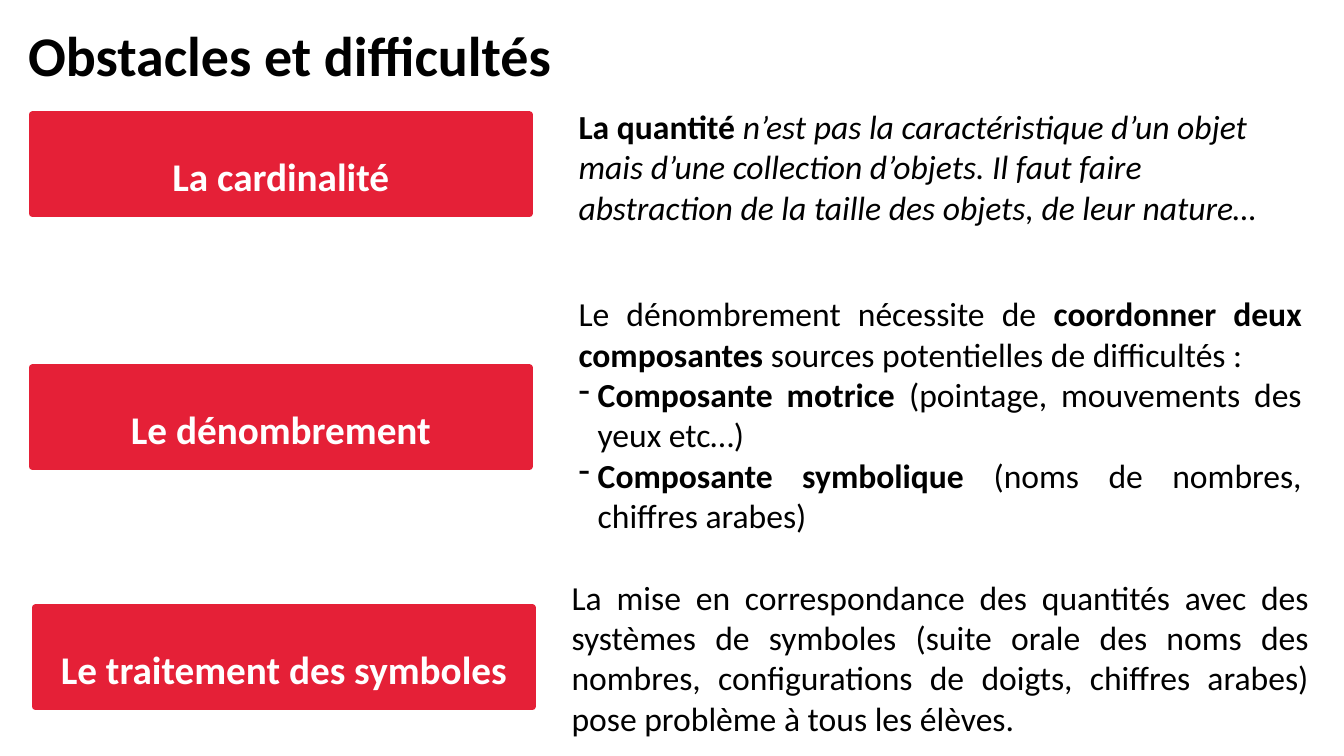
from typing import NamedTuple

from lxml.etree import SubElement
from pptx import Presentation
from pptx.dml.color import RGBColor
from pptx.enum.shapes import MSO_SHAPE as Shape
from pptx.enum.text import MSO_ANCHOR as Anchor, PP_ALIGN as Align
from pptx.oxml.ns import qn
from pptx.util import Inches, Pt

RED, BLACK, WHITE = "E52037", "000000", "FFFFFF"
LABEL_SIZE = (4.93, 0.98)
DASH_INDENT = 0.19


class Run(NamedTuple):
    text: str
    bold: bool = False
    italic: bool = False


class Paragraph(NamedTuple):
    runs: list[Run]
    dash: bool = False


class Obstacle(NamedTuple):
    label: str
    label_at: tuple[float, float]
    explanation_box: tuple[float, float, float, float]
    explanation: list[Paragraph]
    align: Align = Align.JUSTIFY


OBSTACLES = [
    Obstacle("La cardinalité", (0.32, 1.14), (5.64, 1, 7.37, 1.31), [
        Paragraph([
            Run("La quantité ", bold=True),
            Run("n’est pas la caractéristique d’un objet mais d’une collection "
                "d’objets. Il faut faire abstraction de la taille des objets, "
                "de leur nature…", italic=True),
        ]),
    ], Align.LEFT),
    Obstacle("Le dénombrement", (0.32, 3.65), (5.64, 2.86, 7.37, 2.52), [
        Paragraph([
            Run("Le dénombrement nécessite de "),
            Run("coordonner deux composantes", bold=True),
            Run(" sources potentielles de difficultés :"),
        ]),
        Paragraph([
            Run("Composante motrice ", bold=True),
            Run("(pointage, mouvements des yeux etc…)"),
        ], dash=True),
        Paragraph([
            Run("Composante symbolique ", bold=True),
            Run("(noms de nombres, chiffres arabes)"),
        ], dash=True),
    ]),
    Obstacle("Le traitement des symboles", (0.35, 6.03), (5.57, 5.67, 7.51, 1.72), [
        Paragraph([
            Run("La mise en correspondance des quantités avec des systèmes de "
                "symboles (suite orale des noms des nombres, configurations de "
                "doigts, chiffres arabes) pose problème à tous les élèves."),
        ]),
    ]),
]


def rgb(value: str) -> RGBColor:
    return RGBColor.from_string(value)


def add_dash(paragraph) -> None:
    """Give the paragraph a hanging dash bullet."""
    properties = paragraph._p.get_or_add_pPr()
    properties.set("marL", str(Inches(DASH_INDENT)))
    properties.set("indent", str(-Inches(DASH_INDENT)))
    SubElement(properties, qn("a:buChar")).set("char", "-")


def write(frame, paragraphs: list[Paragraph], *, size: float,
          color: str = BLACK, align: Align = Align.LEFT,
          anchor: Anchor = Anchor.TOP, line_spacing: float | None = None) -> None:
    frame.word_wrap = True
    frame.vertical_anchor = anchor
    for index, content in enumerate(paragraphs):
        paragraph = frame.add_paragraph() if index else frame.paragraphs[0]
        paragraph.alignment = align
        if line_spacing:
            paragraph.line_spacing = line_spacing
        if content.dash:
            add_dash(paragraph)
        for part in content.runs:
            run = paragraph.add_run()
            run.text = part.text
            run.font.name = "Calibri"
            run.font.size = Pt(size)
            run.font.bold = part.bold
            run.font.italic = part.italic
            run.font.color.rgb = rgb(color)


def add_text(slide, box: tuple[float, float, float, float],
             paragraphs: list[Paragraph], **text_format) -> None:
    textbox = slide.shapes.add_textbox(*map(Inches, box))
    write(textbox.text_frame, paragraphs, **text_format)


def add_obstacle(slide, obstacle: Obstacle) -> None:
    label = slide.shapes.add_shape(
        Shape.RECTANGLE, *map(Inches, obstacle.label_at + LABEL_SIZE))
    label.shadow.inherit = False
    label.fill.solid()
    label.fill.fore_color.rgb = rgb(RED)
    label.line.color.rgb = rgb(RED)
    label.line.width = Pt(5)
    write(label.text_frame, [Paragraph([Run(obstacle.label, bold=True)])],
          size=28, color=WHITE, align=Align.CENTER, anchor=Anchor.MIDDLE,
          line_spacing=1.5)
    add_text(slide, obstacle.explanation_box, obstacle.explanation,
             size=24, align=obstacle.align)


def main() -> None:
    deck = Presentation()
    deck.slide_width, deck.slide_height = Inches(13.33), Inches(7.5)
    slide = deck.slides.add_slide(deck.slide_layouts[6])
    add_text(slide, (0.18, 0.15, 12.96, 0.77),
             [Paragraph([Run("Obstacles et difficultés", bold=True)])], size=40)
    for obstacle in OBSTACLES:
        add_obstacle(slide, obstacle)
    deck.save("out.pptx")


if __name__ == "__main__":
    main()
